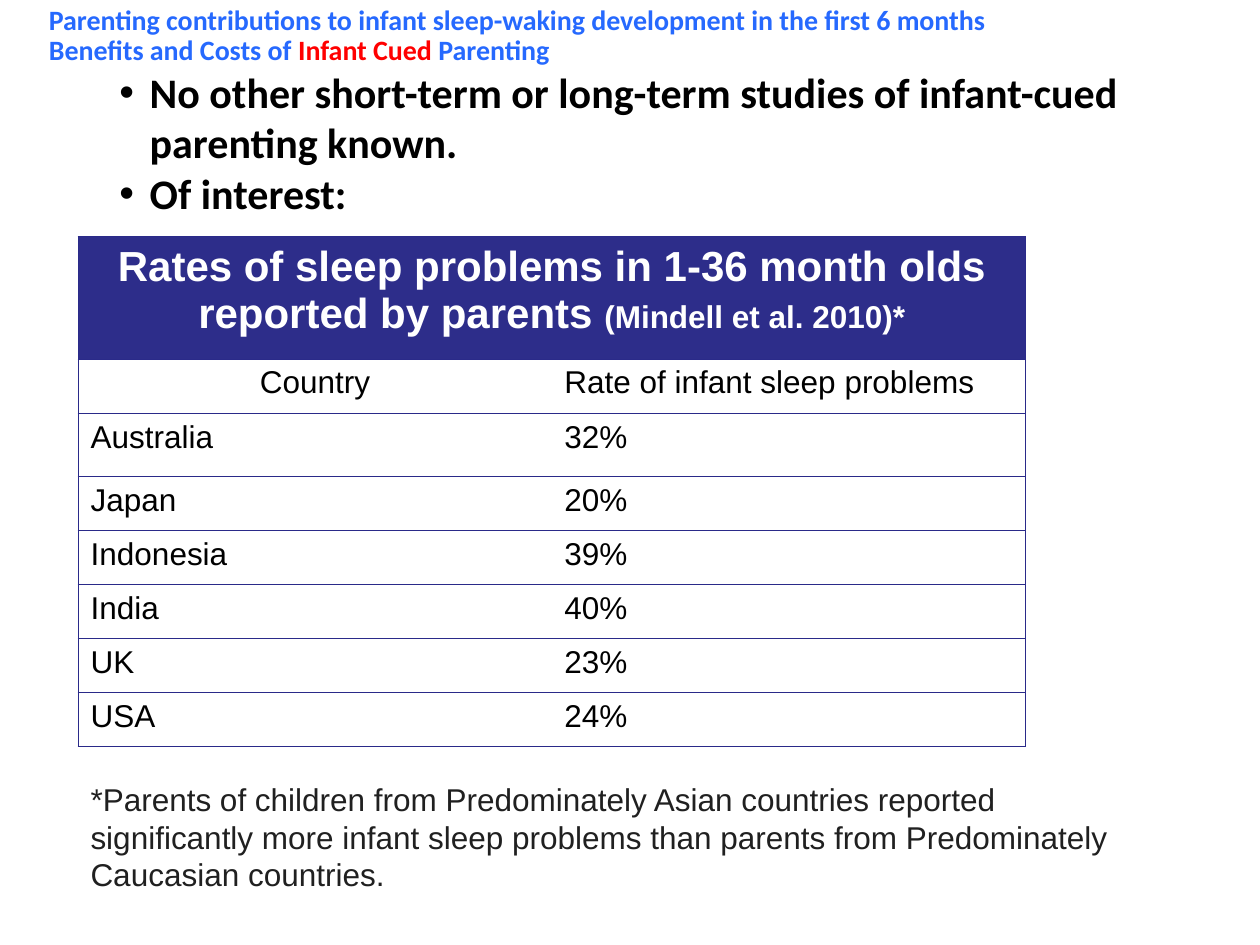
from lxml import etree
from pptx import Presentation
from pptx.dml.color import RGBColor
from pptx.enum.text import MSO_ANCHOR, PP_ALIGN
from pptx.oxml.ns import qn
from pptx.util import Inches, Pt

CENTER, LEFT = PP_ALIGN.CENTER, PP_ALIGN.LEFT
TOP = MSO_ANCHOR.TOP
WIDTH, HEIGHT = Inches(10), Inches(7.5)
COLORS = {
    "heading": "2669FE",
    "accent": "FF0000",
    "text": "000000",
    "note": "202020",
    "banner": "2D2D8A",
    "banner_text": "FFFFFF",
    "border": "2A2A89",
}
HEADING = {"name": "Calibri", "size": Pt(16), "bold": True, "color": "heading"}
CUED = {**HEADING, "color": "accent"}
BULLET = {**HEADING, "size": Pt(24), "color": "text"}
BODY = {"name": "Arial", "size": Pt(18), "bold": False, "color": "text"}
NOTE = {**BODY, "color": "note"}
BANNER = {"name": "Arial", "size": Pt(24), "bold": True, "color": "banner_text"}
CITATION = {**BANNER, "size": Pt(18)}

HEADING_LINES = [
    [("Parenting contributions to infant sleep-waking development in the first 6 months", HEADING)],
    [("Benefits and Costs of ", HEADING), ("Infant Cued", CUED), (" Parenting", HEADING)],
]
BULLETS = [
    "No other short-term or long-term studies of infant-cued parenting known.",
    "Of interest:",
]
TABLE_TITLE = [
    ("Rates of sleep problems in 1-36 month olds reported by parents ", BANNER),
    ("(Mindell et al. 2010)*", CITATION),
]
RATES = [
    ("Country", "Rate of infant sleep problems"),
    ("Australia", "32%"),
    ("Japan", "20%"),
    ("Indonesia", "39%"),
    ("India", "40%"),
    ("UK", "23%"),
    ("USA", "24%"),
]
ROW_SHARES = [12.93, 5.73, 6.67] + [5.73] * 5
FOOTNOTE = (
    "*Parents of children from Predominately Asian countries reported significantly "
    "more infant sleep problems than parents from Predominately Caucasian countries."
)


def across(percent):
    """Return a percentage of the slide width."""
    return round(WIDTH * percent / 100)


def down(percent):
    """Return a percentage of the slide height."""
    return round(HEIGHT * percent / 100)


def add_runs(paragraph, runs):
    """Append formatted runs to a paragraph."""
    for wording, style in runs:
        run = paragraph.add_run()
        run.text = wording
        for key, value in style.items():
            if key == "color":
                run.font.color.rgb = RGBColor.from_string(COLORS[value])
            else:
                setattr(run.font, key, value)


def set_indent(paragraph, margin, hanging, bullet=None):
    """Give a paragraph a hanging indent and an optional bullet."""
    properties = paragraph._p.get_or_add_pPr()
    properties.set("marL", str(across(margin)))
    properties.set("indent", str(-across(hanging)))
    if bullet:
        etree.SubElement(properties, qn("a:buFont"), typeface="Arial")
        etree.SubElement(properties, qn("a:buChar"), char=bullet)


def add_text(slide, left, top, width, height):
    """Add a wrapping text box and return its text frame."""
    box = slide.shapes.add_textbox(across(left), down(top), across(width), down(height))
    box.text_frame.word_wrap = True
    return box.text_frame


def add_opening(slide):
    """Add the heading lines and the bullets below them."""
    frame = add_text(slide, 2.9, 0, 96.7, 24)
    lines = [(runs, None) for runs in HEADING_LINES]
    lines += [([(wording, BULLET)], "•") for wording in BULLETS]
    for index, (runs, bullet) in enumerate(lines):
        paragraph = frame.add_paragraph() if index else frame.paragraphs[0]
        if bullet:
            set_indent(paragraph, 8, 2.4, bullet)
        else:
            set_indent(paragraph, 5.6, 5.6)
            paragraph.line_spacing = 0.9
        add_runs(paragraph, runs)


def set_borders(cell, sides):
    """Draw the named sides of a cell and clear the others."""
    properties = cell._tc.get_or_add_tcPr()
    for side in "LRTB":
        line = etree.SubElement(properties, qn(f"a:ln{side}"), w=str(Pt(0.75)))
        if side in sides:
            fill = etree.SubElement(line, qn("a:solidFill"))
            etree.SubElement(fill, qn("a:srgbClr"), val=COLORS["border"])
        else:
            etree.SubElement(line, qn("a:noFill"))


def fill_cell(cell, runs, align, sides, color=None):
    """Set the borders, fill and wording of a cell."""
    set_borders(cell, sides)
    if color:
        cell.fill.solid()
        cell.fill.fore_color.rgb = RGBColor.from_string(COLORS[color])
    else:
        cell.fill.background()
    cell.vertical_anchor = TOP
    paragraph = cell.text_frame.paragraphs[0]
    paragraph.alignment = align
    add_runs(paragraph, runs)


def add_rates_table(slide):
    """Add the table of sleep problem rates by country."""
    table = slide.shapes.add_table(
        len(ROW_SHARES), 2, across(6.2), down(25.07), across(75.2), down(sum(ROW_SHARES))
    ).table
    table.horz_banding = False
    for row, share in zip(table.rows, ROW_SHARES):
        row.height = down(share)
    table.cell(0, 0).merge(table.cell(0, 1))
    fill_cell(table.cell(0, 0), TABLE_TITLE, CENTER, "LRTB", "banner")
    fill_cell(table.cell(0, 1), [], CENTER, "RTB", "banner")
    for row, (country, rate) in enumerate(RATES, start=1):
        align = CENTER if row == 1 else LEFT
        fill_cell(table.cell(row, 0), [(country, BODY)], align, "LTB")
        fill_cell(table.cell(row, 1), [(rate, BODY)], LEFT, "RTB")


def main():
    """Build and save the slide."""
    deck = Presentation()
    deck.slide_width, deck.slide_height = WIDTH, HEIGHT
    slide = deck.slides.add_slide(deck.slide_layouts[6])
    add_rates_table(slide)
    footnote = add_text(slide, 6.2, 81.87, 83.9, 13.47)
    add_runs(footnote.paragraphs[0], [(FOOTNOTE, NOTE)])
    add_opening(slide)
    deck.save("out.pptx")


if __name__ == "__main__":
    main()
